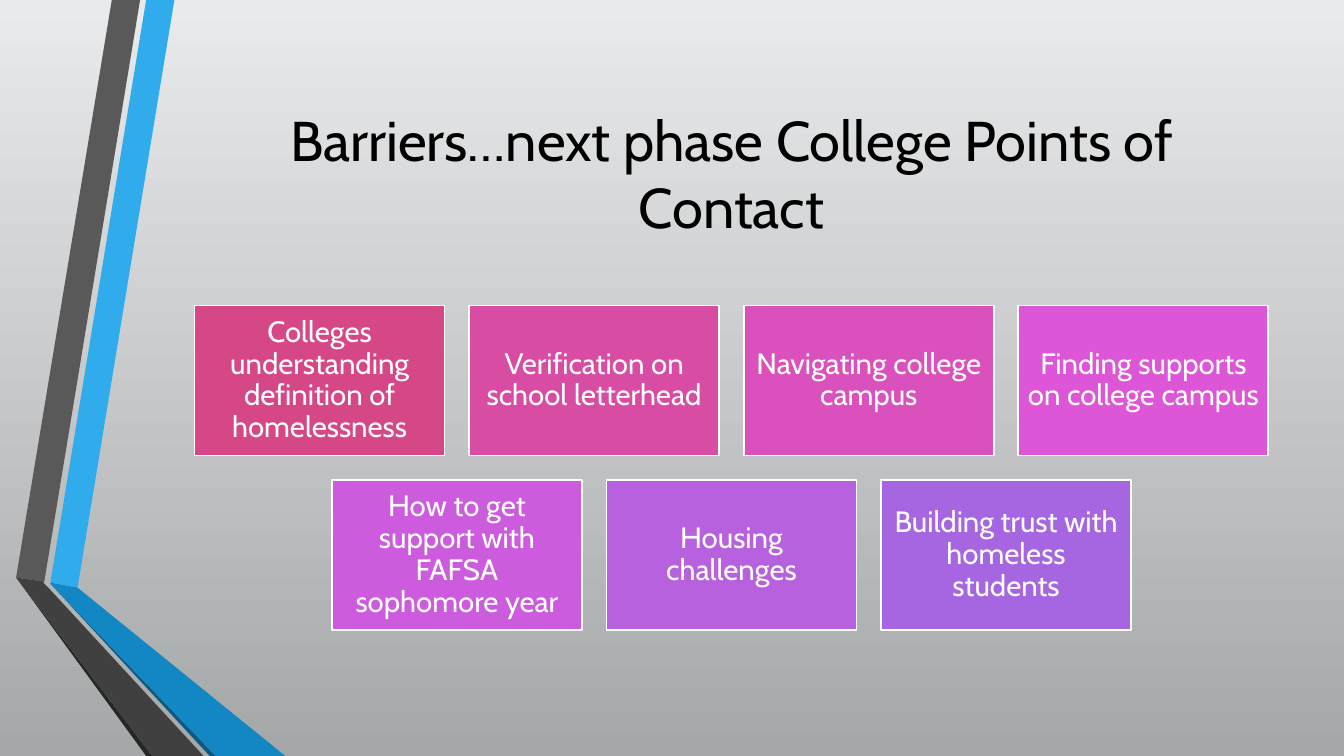
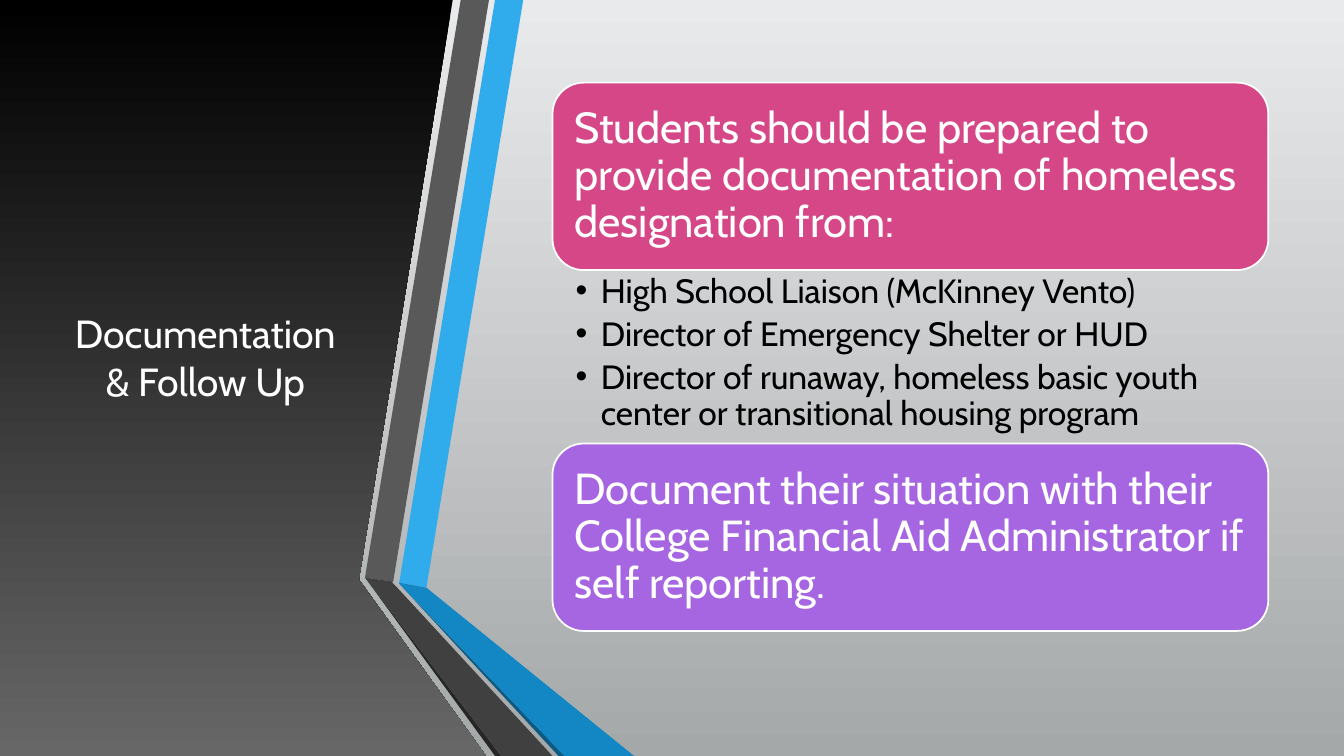
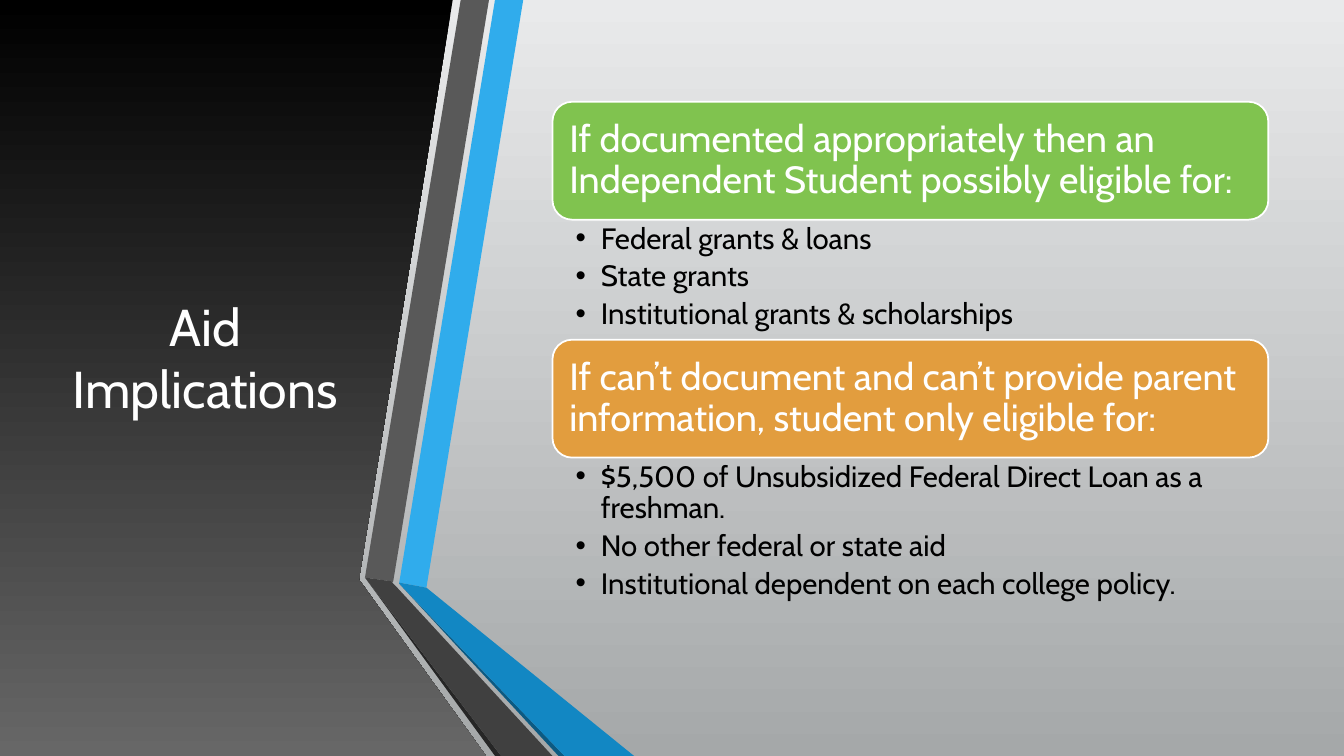
import dataclasses

import pptx
import pptx.dml.color
import pptx.enum.shapes
import pptx.enum.text
import pptx.util

Inches = pptx.util.Inches
Pt = pptx.util.Pt
MSO_SHAPE = pptx.enum.shapes.MSO_SHAPE
PP_ALIGN = pptx.enum.text.PP_ALIGN
MSO_ANCHOR = pptx.enum.text.MSO_ANCHOR


@dataclasses.dataclass(frozen=True)
class Theme:
    font: str = "Cabin"
    black: str = "000000"
    white: str = "FFFFFF"
    backdrop: tuple = ("E9EAEB", "A5A8A9")
    panel: tuple = ("000000", "676767")
    blue: str = "30ACEC"
    blue_deep: str = "1287C3"
    blue_edge: str = "0C5A82"
    grey: str = "595959"
    grey_deep: str = "404040"
    grey_edge: str = "262626"
    pink: str = "D64787"
    violet: str = "A666E1"
    green: str = "80C34F"
    orange: str = "E29D3E"
    cards: tuple = ("D64787", "D84CA3", "DA51BD", "DC56D7",
                    "CC5BDE", "B861DF", "A666E1")
    title_size: int = 40
    card_size: int = 21
    border: float = 1.25


THEME = Theme()

RIBBON = [
    (THEME.blue, [(0.5, 5.78), (0.77, 5.83), (1.73, 0), (1.45, 0)]),
    (THEME.grey, [(1.39, 0), (1.11, 0), (0.16, 5.73), (0.44, 5.77)]),
    (THEME.grey_edge, [(0.16, 5.73), (1.45, 7.5), (1.51, 7.5)]),
    (THEME.blue_edge, [(0.5, 5.79), (2.08, 7.5), (2.14, 7.5)]),
    (THEME.blue_deep, [(0.5, 5.79), (2.14, 7.5), (2.83, 7.5),
                       (0.77, 5.83), (0.5, 5.78)]),
    (THEME.grey_deep, [(2.02, 7.5), (0.48, 5.83), (0.43, 5.78),
                       (0.44, 5.77), (0.16, 5.73), (1.51, 7.5)]),
]
PANEL = [(0, 0), (4.49, 0), (3.56, 5.75), (4.82, 7.5), (0, 7.5)]
PANEL_RIBBON_LEFT = 3.46


def rgb(color):
    return pptx.dml.color.RGBColor.from_string(color)


def fill_gradient(fill, colors):
    fill.gradient()
    fill.gradient_angle = 270
    for stop, color in zip(fill.gradient_stops, colors):
        stop.color.rgb = rgb(color)


def add_outline(shapes, points, left=0):
    pts = [(Inches(left + x), Inches(y)) for x, y in points]
    builder = shapes.build_freeform(*pts[0])
    builder.add_line_segments(pts[1:], close=True)
    sp = builder.convert_to_shape()
    sp.shadow.inherit = False
    sp.line.fill.background()
    return sp


def decorate_layout(s, with_panel):
    grp = s.shapes.add_group_shape()
    if with_panel:
        fill_gradient(add_outline(grp.shapes, PANEL).fill, THEME.panel)
    left = PANEL_RIBBON_LEFT if with_panel else 0
    for color, points in RIBBON:
        sp = add_outline(grp.shapes, points, left)
        sp.fill.solid()
        sp.fill.fore_color.rgb = rgb(color)
    for number, props in enumerate(grp.element.xpath(".//p:cNvPr"), 100):
        props.set("id", str(number))
    s.slide_layout.shapes.element.insert(2, grp.element)


def place(sp, box):
    sp.left, sp.top, sp.width, sp.height = (Inches(v) for v in box)


def set_insets(tf, left, top, right, bottom):
    tf.margin_left, tf.margin_top = Inches(left), Inches(top)
    tf.margin_right, tf.margin_bottom = Inches(right), Inches(bottom)


def add_text(p, text, size, color, align, spacing=0.9):
    p.alignment = align
    p.line_spacing = spacing
    p.space_before = Pt(0)
    r = p.add_run()
    r.text = text
    r.font.name = THEME.font
    r.font.size = Pt(size)
    r.font.color.rgb = rgb(color)


def set_title(s, box, text, size, color):
    sp = s.shapes.title
    place(sp, box)
    tf = sp.text_frame
    tf.word_wrap = True
    tf.auto_size = pptx.enum.text.MSO_AUTO_SIZE.NONE
    tf.vertical_anchor = MSO_ANCHOR.MIDDLE
    add_text(tf.paragraphs[0], text, size, color, PP_ALIGN.CENTER, 1.0)


def add_card(s, kind, box, color, text, size, align, inset):
    sp = s.shapes.add_shape(kind, *(Inches(v) for v in box))
    sp.shadow.inherit = False
    sp.fill.solid()
    sp.fill.fore_color.rgb = rgb(color)
    sp.line.color.rgb = rgb(THEME.white)
    sp.line.width = Pt(THEME.border)
    tf = sp.text_frame
    tf.word_wrap = True
    tf.vertical_anchor = MSO_ANCHOR.MIDDLE
    set_insets(tf, inset, inset, inset, inset)
    add_text(tf.paragraphs[0], text, size, THEME.white, align)


def fill_list(sp, box, items, size):
    place(sp, box)
    tf = sp.text_frame
    tf.word_wrap = True
    tf.auto_size = pptx.enum.text.MSO_AUTO_SIZE.NONE
    tf.vertical_anchor = MSO_ANCHOR.TOP
    set_insets(tf, 0.23, 0.04, 0.22, 0.04)
    for i, item in enumerate(items):
        p = tf.add_paragraph() if i else tf.paragraphs[0]
        add_text(p, item, size, THEME.black, PP_ALIGN.LEFT)
        p.space_after = Pt(0.2 * size)
        pPr = p._p.get_or_add_pPr()
        pPr.set("marL", str(Inches(0.25)))
        pPr.set("indent", str(Inches(-0.25)))


def add_card_grid(s, box, rows):
    left, top, width, height = box
    card_w, card_h = 2.48, 1.49
    most = max(len(row) for row in rows)
    step_x = card_w + (width - most * card_w) / (most - 1)
    step_y = (height - card_h) / (len(rows) - 1)
    colors = iter(THEME.cards)
    for i, row in enumerate(rows):
        start = left + (most - len(row)) * step_x / 2
        for j, text in enumerate(row):
            card = (start + j * step_x, top + i * step_y, card_w, card_h)
            add_card(s, MSO_SHAPE.RECTANGLE, card, next(colors), text,
                     THEME.card_size, PP_ALIGN.CENTER, 0.09)


def add_section_stack(s, box, sections, card_h, head_size, list_size, inset):
    left, top, width = box
    bodies = (ph for ph in s.placeholders if ph.placeholder_format.idx)
    for color, head, list_h, items in sections:
        add_card(s, MSO_SHAPE.ROUNDED_RECTANGLE, (left, top, width, card_h),
                 color, head, head_size, PP_ALIGN.LEFT, inset)
        top += card_h
        if items:
            fill_list(next(bodies), (left, top, width, list_h),
                      items, list_size)
            top += list_h


def add_grid_slide(prs, title, rows):
    s = prs.slides.add_slide(prs.slide_layouts.get_by_name("Title Only"))
    decorate_layout(s, with_panel=False)
    set_title(s, (1.93, 0.75, 10.65, 1.92), title,
              THEME.title_size, THEME.black)
    add_card_grid(s, (1.93, 3.03, 10.65, 3.22), rows)


def add_panel_slide(prs, layout, title, title_size, top, sections, **sizes):
    s = prs.slides.add_slide(prs.slide_layouts.get_by_name(layout))
    decorate_layout(s, with_panel=True)
    set_title(s, (0.59, 0.75, 2.89, 5.58), title, title_size, THEME.white)
    add_section_stack(s, (5.48, top, 7.1), sections, **sizes)


def main():
    prs = pptx.Presentation()
    prs.slide_width, prs.slide_height = Inches(13.33), Inches(7.5)
    fill_gradient(prs.slide_master.background.fill, THEME.backdrop)

    add_grid_slide(prs, "Barriers…next phase College Points of Contact", [
        ["Colleges understanding definition of homelessness",
         "Verification on school letterhead",
         "Navigating college campus",
         "Finding supports on college campus"],
        ["How to get support with FAFSA sophomore year",
         "Housing challenges",
         "Building trust with homeless students"],
    ])

    add_panel_slide(
        prs, "Title and Content", "Documentation & Follow Up", 28, 0.82,
        [(THEME.pink, "Students should be prepared to provide documentation "
          "of homeless designation from:", 1.72,
          ["High School Liaison (McKinney Vento)",
           "Director of Emergency Shelter or HUD",
           "Director of runaway, homeless basic youth center or "
           "transitional housing program"]),
         (THEME.violet, "Document their situation with their College "
          "Financial Aid Administrator if self reporting.", 0, [])],
        card_h=1.86, head_size=31, list_size=24, inset=0.13)

    add_panel_slide(
        prs, "Two Content", "Aid Implications", 37, 1.01,
        [(THEME.green, "If documented appropriately then an Independent "
          "Student possibly eligible for:", 1.19,
          ["Federal grants & loans",
           "State grants",
           "Institutional grants & scholarships"]),
         (THEME.orange, "If can’t document and can’t provide parent "
          "information, student only eligible for:", 1.53,
          ["$5,500 of Unsubsidized Federal Direct Loan as a freshman.",
           "No other federal or state aid",
           "Institutional dependent on each college policy."])],
        card_h=1.17, head_size=27, list_size=21, inset=0.11)

    prs.save("out.pptx")


if __name__ == "__main__":
    main()
